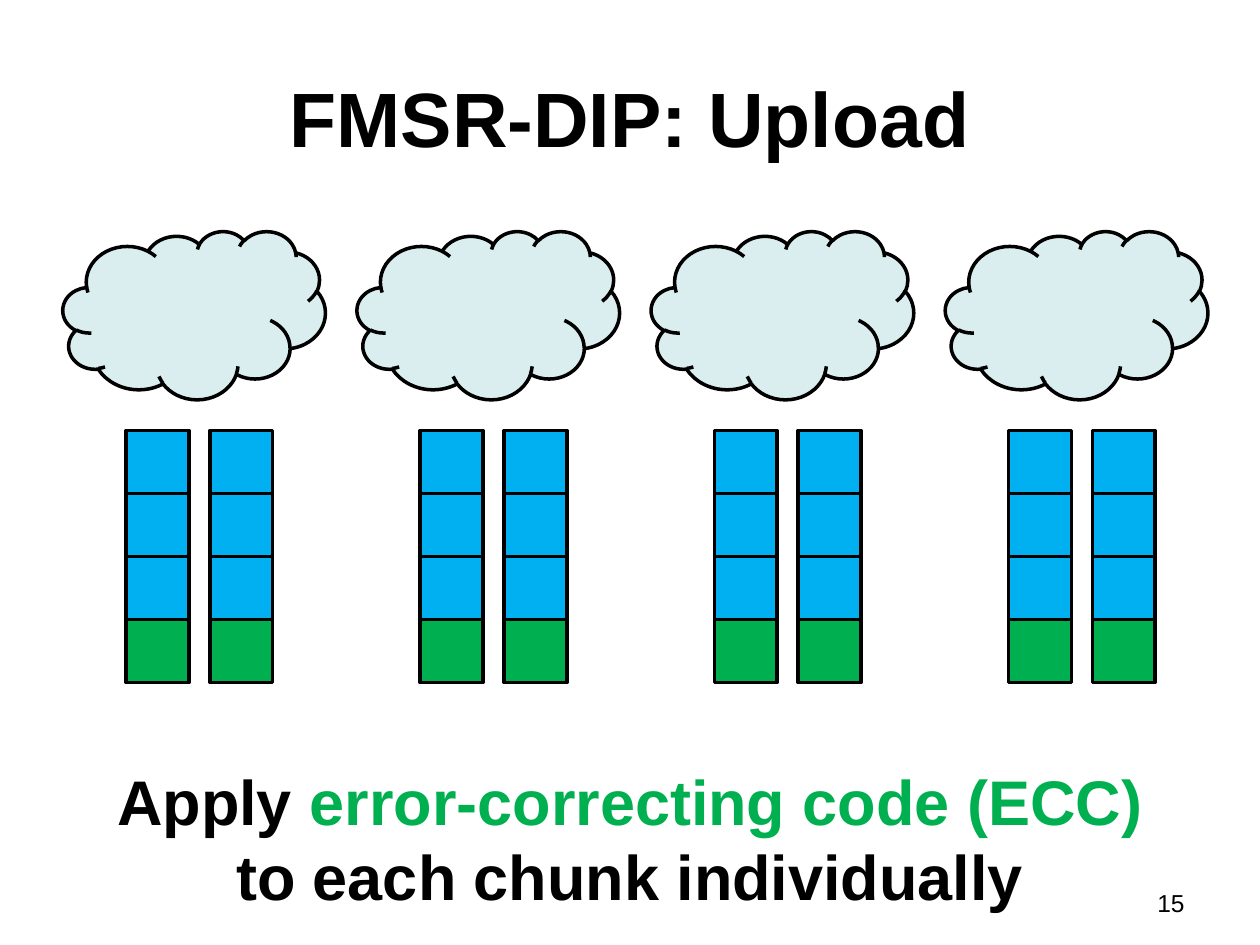
import pptx
import pptx.util
import pptx.dml.color
import pptx.enum.shapes
import pptx.enum.text

Cm = pptx.util.Cm
Pt = pptx.util.Pt
Kind = pptx.enum.shapes.MSO_SHAPE
Align = pptx.enum.text.PP_ALIGN
Anchor = pptx.enum.text.MSO_ANCHOR

hues = {"ink": "000000", "cloud": "DAEDEF", "data": "00B0F0", "code": "00B050"}


def tint(name):
    return pptx.dml.color.RGBColor.from_string(hues[name])


def write(para, text, size=36, hue="ink", bold=True, align=Align.CENTER):
    para.alignment = align
    run = para.add_run()
    run.text = text
    run.font.name = "Arial"
    run.font.size = Pt(size)
    run.font.bold = bold
    run.font.color.rgb = tint(hue)


deck = pptx.Presentation()
deck.slide_width = Cm(25.4)
deck.slide_height = Cm(19.05)
slide = deck.slides.add_slide(deck.slide_layouts[5])
shapes = slide.shapes

title = shapes.title
title.left, title.top = Cm(1.27), Cm(0.76)
title.width, title.height = Cm(22.86), Cm(3.18)
title.text_frame.vertical_anchor = Anchor.MIDDLE
write(title.text_frame.paragraphs[0], "FMSR-DIP: Upload", size=44)

side = 1.27
parts = []
for node in range(4):
    left = 1.27 + node * 5.93
    parts.append((Kind.CLOUD, left, 4.66, 5.29, 3.39, "cloud"))
    for chunk in range(2):
        for row, hue in enumerate(["data", "data", "data", "code"]):
            x = left + side + chunk * 1.69
            y = 8.68 + row * side
            parts.append((Kind.RECTANGLE, x, y, side, side, hue))

for kind, x, y, width, height, hue in parts:
    shape = shapes.add_shape(kind, Cm(x), Cm(y), Cm(width), Cm(height))
    shape.shadow.inherit = False
    shape.fill.solid()
    shape.fill.fore_color.rgb = tint(hue)
    shape.line.color.rgb = tint("ink")
    shape.line.width = Pt(2)

note = shapes.add_textbox(Cm(0), Cm(15.24), Cm(25.4), Cm(3.33)).text_frame
note.word_wrap = True
note.auto_size = pptx.enum.text.MSO_AUTO_SIZE.SHAPE_TO_FIT_TEXT
para = note.paragraphs[0]
write(para, "Apply ")
write(para, "error-correcting code (ECC)", hue="code")
para.add_line_break()
write(para, "to each chunk individually")

page = shapes.add_textbox(Cm(18.2), Cm(17.78), Cm(5.93), Cm(0.9)).text_frame
page.word_wrap = True
write(page.paragraphs[0], "15", size=14, bold=False, align=Align.RIGHT)

deck.save("out.pptx")
